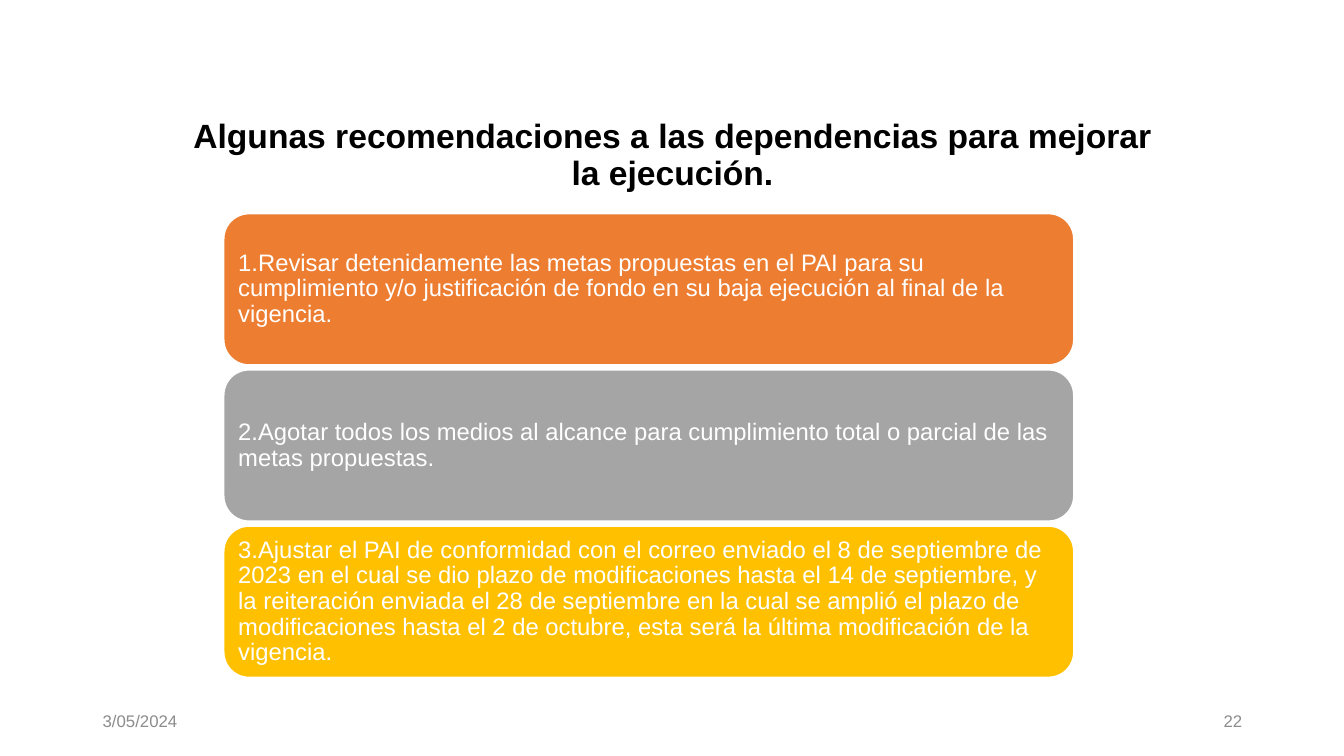
from pptx import Presentation
from pptx.dml.color import RGBColor
from pptx.enum.shapes import MSO_SHAPE
from pptx.enum.text import MSO_ANCHOR, MSO_AUTO_SIZE, PP_ALIGN
from pptx.util import Inches, Pt

ROUNDED = MSO_SHAPE.ROUNDED_RECTANGLE
BOTTOM, MIDDLE = MSO_ANCHOR.BOTTOM, MSO_ANCHOR.MIDDLE
LEFT, CENTER, RIGHT = PP_ALIGN.LEFT, PP_ALIGN.CENTER, PP_ALIGN.RIGHT
NO_AUTOFIT = MSO_AUTO_SIZE.NONE

FONT = "Arial"
TITLE = "Algunas recomendaciones a las dependencias para mejorar la ejecución."
RECOMMENDATIONS = [
    ("ED7D31", "1.Revisar detenidamente las metas propuestas en el PAI para su "
     "cumplimiento y/o justificación de fondo en su baja ejecución al final de la vigencia."),
    ("A5A5A5", "2.Agotar todos los medios al alcance para cumplimiento total o "
     "parcial de las metas propuestas."),
    ("FFC000", "3.Ajustar el PAI de conformidad con el correo enviado el 8 de "
     "septiembre de 2023 en el cual se dio plazo de modificaciones hasta el 14 de "
     "septiembre, y la reiteración enviada el 28 de septiembre en la cual se amplió "
     "el plazo de modificaciones hasta el 2 de octubre, esta será la última "
     "modificación de la vigencia."),
]
CARD_LEFT, CARD_TOP, CARD_WIDTH, CARD_HEIGHT = 2.22, 2.12, 8.43, 1.5
CARD_PITCH = 1.55
CARD_INSET = 0.07


def color(value):
    return RGBColor.from_string(value)


def write_text(shape, text, size, text_color, align, anchor, bold=False, spacing=1.0):
    frame = shape.text_frame
    frame.word_wrap = True
    frame.auto_size = NO_AUTOFIT
    frame.vertical_anchor = anchor
    frame.text = text
    paragraph = frame.paragraphs[0]
    paragraph.alignment = align
    paragraph.line_spacing = spacing
    paragraph.font.name = FONT
    paragraph.font.size = Pt(size)
    paragraph.font.bold = bold
    paragraph.font.color.rgb = color(text_color)


def set_title(slide):
    title = slide.shapes.title
    title.left, title.top = Inches(1.67), Inches(0.15)
    title.width, title.height = Inches(10), Inches(1.81)
    write_text(title, TITLE, 24, "000000", CENTER, BOTTOM, bold=True, spacing=0.9)


def add_card(slide, top, fill, text):
    card = slide.shapes.add_shape(ROUNDED, Inches(CARD_LEFT), Inches(top),
                                  Inches(CARD_WIDTH), Inches(CARD_HEIGHT))
    card.shadow.inherit = False
    card.fill.solid()
    card.fill.fore_color.rgb = color(fill)
    card.line.color.rgb = color("FFFFFF")
    card.line.width = Pt(1)
    frame = card.text_frame
    frame.margin_left = frame.margin_right = Inches(CARD_INSET)
    frame.margin_top = frame.margin_bottom = Inches(CARD_INSET)
    write_text(card, text, 17, "FFFFFF", LEFT, MIDDLE, spacing=0.9)


def add_footer(slide, left, text, align):
    box = slide.shapes.add_textbox(Inches(left), Inches(6.95), Inches(3), Inches(0.4))
    write_text(box, text, 12, "8C8C8C", align, MIDDLE)


def main():
    presentation = Presentation()
    presentation.slide_width = Inches(13.33)
    presentation.slide_height = Inches(7.5)
    slide = presentation.slides.add_slide(presentation.slide_layouts[5])

    set_title(slide)

    # Date and slide number
    add_footer(slide, 0.92, "3/05/2024", LEFT)
    add_footer(slide, 9.42, "22", RIGHT)

    # Stacked recommendations
    for index, (fill, text) in enumerate(RECOMMENDATIONS):
        add_card(slide, CARD_TOP + index * CARD_PITCH, fill, text)

    presentation.save("out.pptx")


if __name__ == "__main__":
    main()
